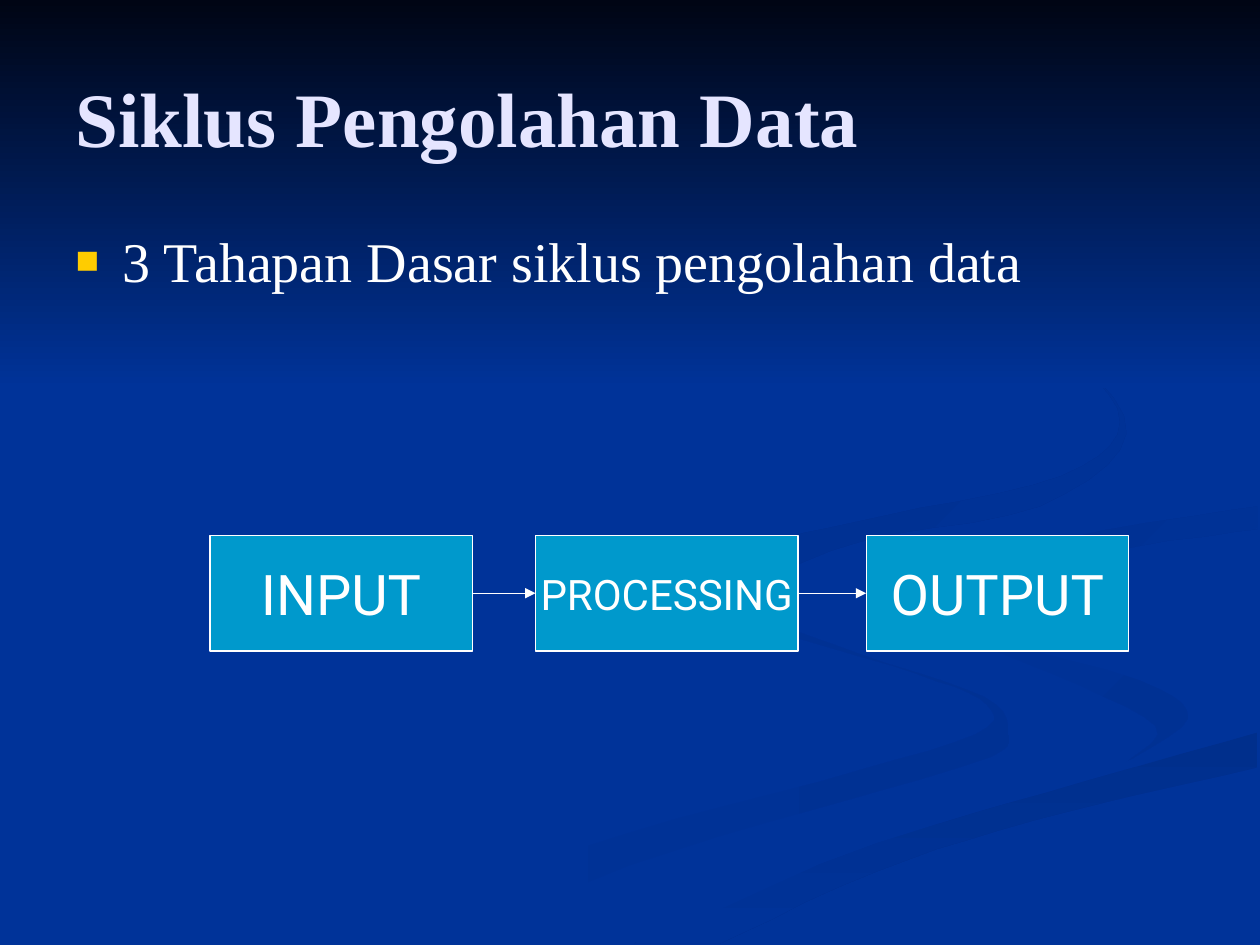
from dataclasses import dataclass

from lxml.etree import SubElement
from pptx import Presentation
from pptx.dml.color import RGBColor
from pptx.enum.shapes import MSO_CONNECTOR, MSO_SHAPE
from pptx.enum.text import MSO_ANCHOR, PP_ALIGN
from pptx.oxml.ns import qn
from pptx.util import Pt

Point = tuple[float, float]

BLUE, NIGHT, CYAN, WHITE = "003399", "000514", "0099CC", "FFFFFF"
LAVENDER, GOLD = "E5E5FF", "FFCC00"
SERIF, SANS = "Times New Roman", "Roboto"
UNIT = Pt(0.72)  # ribbon coordinates count hundredths of an inch
SMOOTHNESS = 5  # straight pieces between two knots


@dataclass
class Ribbon:
    start: str
    end: str
    angle: int  # clockwise degrees
    edges: list[list[Point]]  # knots of each smooth edge, in drawing order


@dataclass
class Step:
    label: str
    size: int
    left: float


RIBBONS = [
    Ribbon(BLUE, "003193", 0, [
        [(575, 459), (570, 472), (611, 499), (728, 535), (783, 559),
         (774, 583), (652, 620), (458, 674), (300, 749)],
        [(361, 749), (499, 687), (676, 634), (786, 601), (800, 581),
         (781, 553), (682, 519), (594, 485), (575, 459)]]),
    Ribbon(BLUE, "003193", 45, [
        [(724, 464), (739, 494), (838, 536), (917, 576), (894, 605)],
        [(894, 605), (943, 570), (905, 540), (792, 509), (733, 483),
         (724, 464)]]),
    Ribbon("002F8C", BLUE, 90, [
        [(571, 749), (695, 692), (821, 651), (998, 609)],
        [(998, 581), (831, 629), (696, 669), (569, 719), (503, 749)]]),
    Ribbon(BLUE, BLUE, 0, [
        [(725, 464), (759, 498), (905, 540), (943, 570), (892, 605),
         (663, 668), (477, 749)],
        [(519, 747), (696, 669), (999, 581)],
        [(999, 538), (848, 503), (781, 463), (850, 427), (999, 402)],
        [(999, 387), (788, 422), (725, 464)]]),
    Ribbon("003091", BLUE, 45, [
        [(998, 402), (849, 427), (781, 460), (826, 496)],
        [(826, 496), (805, 472), (878, 439), (998, 420)]]),
    Ribbon("002F8E", BLUE, 45, [
        [(762, 233), (846, 279), (889, 335), (842, 378), (704, 409),
         (605, 433), (577, 462), (622, 500)],
        [(622, 500), (593, 470), (683, 430), (825, 402), (894, 344),
         (843, 275), (762, 233)]]),
]

STEPS = [Step("INPUT", 32, 120), Step("PROCESSING", 24, 306),
         Step("OUTPUT", 32, 495)]


def colour(hex_value: str) -> RGBColor:
    return RGBColor.from_string(hex_value)


def apply(target, values: dict) -> None:
    for name, value in values.items():
        setattr(target, name, value)


def smooth_edge(knots: list[Point]) -> list[Point]:
    """Catmull-Rom curve through the knots."""
    padded = [knots[0], *knots, knots[-1]]
    curve = [knots[0]]
    for a, b, c, d in zip(padded, padded[1:], padded[2:], padded[3:]):
        for piece in range(1, SMOOTHNESS + 1):
            t = piece / SMOOTHNESS
            curve.append(tuple(
                q + t * (r - p) / 2 + t**2 * (2 * p - 5 * q + 4 * r - s) / 2
                + t**3 * (3 * q - p - 3 * r + s) / 2
                for p, q, r, s in zip(a, b, c, d)))
    return curve


def fill_gradient(shape, start: str, end: str, angle: int) -> None:
    shape.shadow.inherit = False
    shape.line.fill.background()
    shape.fill.gradient()
    shape.fill.gradient_angle = -angle % 360
    stops = zip(shape.fill.gradient_stops, (start, end))
    for position, (stop, hex_value) in enumerate(stops):
        stop.color.rgb = colour(hex_value)
        stop.position = position


def draw_ribbon(page, ribbon: Ribbon) -> None:
    outline = [point for edge in ribbon.edges for point in smooth_edge(edge)]
    builder = page.shapes.build_freeform(*outline[0], scale=UNIT)
    builder.add_line_segments(outline[1:], close=True)
    fill_gradient(builder.convert_to_shape(), ribbon.start, ribbon.end,
                  ribbon.angle)


def write(frame, text: str, font: str, size: float, hex_value: str,
          align=PP_ALIGN.LEFT, bold: bool = False):
    para = frame.paragraphs[0]
    para.alignment = align
    span = para.add_run()
    span.text = text
    apply(span.font, {"name": font, "size": Pt(size), "bold": bold})
    span.font.color.rgb = colour(hex_value)
    return para


def place(shape, left: float, top: float, width: float, height: float) -> None:
    apply(shape, {"left": Pt(left), "top": Pt(top),
                  "width": Pt(width), "height": Pt(height)})


def add_bullet(para, symbol: str, hex_value: str, percent: int,
               indent: float) -> None:
    properties = para._p.get_or_add_pPr()
    properties.set("marL", str(Pt(indent)))
    properties.set("indent", str(-Pt(indent)))
    tint = SubElement(properties, qn("a:buClr"))
    SubElement(tint, qn("a:srgbClr"), val=hex_value)
    SubElement(properties, qn("a:buSzPct"), val=str(percent * 1000))
    SubElement(properties, qn("a:buFont"), typeface=SERIF)
    SubElement(properties, qn("a:buChar"), char=symbol)


def draw_step(page, step: Step):
    box = page.shapes.add_shape(MSO_SHAPE.FLOWCHART_PROCESS, Pt(step.left),
                                Pt(306), Pt(150), Pt(66))
    box.shadow.inherit = False
    box.fill.solid()
    box.fill.fore_color.rgb = colour(CYAN)
    box.line.color.rgb = colour(WHITE)
    box.line.width = Pt(0.75)
    apply(box.text_frame, {"word_wrap": False,
                           "vertical_anchor": MSO_ANCHOR.MIDDLE})
    write(box.text_frame, step.label, SANS, step.size, WHITE, PP_ALIGN.CENTER)
    return box


def draw_arrow(page, source, target) -> None:
    arrow = page.shapes.add_connector(MSO_CONNECTOR.STRAIGHT, 0, 0, 0, 0)
    arrow.begin_connect(source, 3)  # right side
    arrow.end_connect(target, 1)  # left side
    arrow.line.color.rgb = colour(WHITE)
    arrow.line.width = Pt(0.75)
    SubElement(arrow.line._get_or_add_ln(), qn("a:tailEnd"), type="triangle")
    SubElement(arrow._element.spPr, qn("a:effectLst"))


def main() -> None:
    deck = Presentation()
    apply(deck, {"slide_width": Pt(720), "slide_height": Pt(540)})
    page = deck.slides.add_slide(deck.slide_layouts[1])
    title, body = page.shapes.title, page.placeholders[1]

    # Backdrop, kept behind the placeholders
    page.background.fill.solid()
    page.background.fill.fore_color.rgb = colour(BLUE)
    for ribbon in RIBBONS:
        draw_ribbon(page, ribbon)
    sky = page.shapes.add_shape(MSO_SHAPE.RECTANGLE, 0, 0, Pt(720), Pt(222))
    fill_gradient(sky, NIGHT, BLUE, 90)
    for holder in (title, body):
        page.shapes._spTree.append(holder._element)

    # Title and list
    place(title, 36, 21.6, 648, 90)
    title.text_frame.vertical_anchor = MSO_ANCHOR.MIDDLE
    write(title.text_frame, "Siklus Pengolahan Data", SERIF, 44, LAVENDER,
          bold=True)
    place(body, 36, 126, 648, 356.4)
    item = write(body.text_frame, "3 Tahapan Dasar siklus pengolahan data",
                 SERIF, 32, WHITE)
    add_bullet(item, "■", GOLD, 70, 27)

    # Flow of steps
    boxes = [draw_step(page, step) for step in STEPS]
    for source, target in zip(boxes, boxes[1:]):
        draw_arrow(page, source, target)

    deck.save("out.pptx")


if __name__ == "__main__":
    main()
